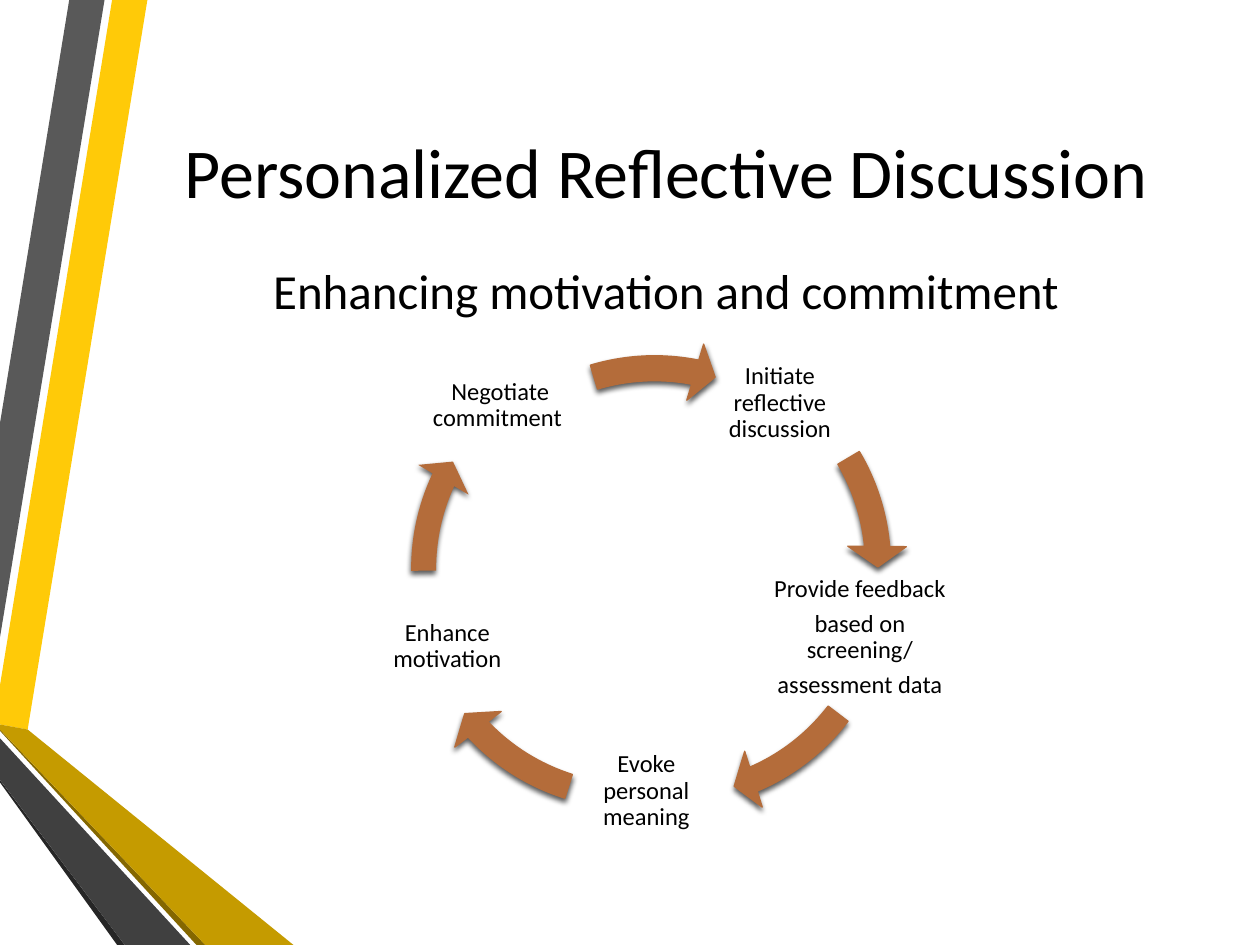
from dataclasses import dataclass
from lxml.etree import SubElement
from pptx import Presentation
from pptx.dml.color import RGBColor
from pptx.enum.shapes import MSO_SHAPE
from pptx.enum.text import MSO_ANCHOR, PP_ALIGN
from pptx.oxml.ns import qn
from pptx.util import Emu, Pt

EMU_PER_PX = 9144  # 100 px to the inch


@dataclass(frozen=True)
class Theme:
    font: str = "Calibri"
    text: str = "000000"
    arrow: str = "B46C3A"
    shadow: str = "000000"
    yellow: str = "FFCA08"
    gold: str = "C59B00"
    dark_gold: str = "846700"
    grey: str = "595959"
    dark_grey: str = "404040"
    charcoal: str = "262626"
    title_size: float = 40
    subtitle_size: float = 28
    label_size: float = 14


@dataclass(frozen=True)
class Ribbon:
    colour: str
    points: tuple[tuple[int, int], ...]


@dataclass(frozen=True)
class TextBlock:
    left: int
    top: int
    width: int
    height: int
    lines: tuple[str, ...]


@dataclass(frozen=True)
class CycleArrow:
    left: int
    top: int
    start: float  # degrees clockwise from three o'clock
    tip: float
    outlined: bool = True


THEME = Theme()
ARROW_BOX = 381

RIBBONS = (
    Ribbon(THEME.yellow, ((0, 544), (0, 575), (22, 579), (117, 0), (89, 0))),
    Ribbon(THEME.grey, ((83, 0), (55, 0), (0, 336), (0, 506))),
    Ribbon(THEME.charcoal, ((0, 619), (0, 621), (93, 750), (99, 750))),
    Ribbon(THEME.dark_gold, ((0, 579), (0, 580), (156, 750), (163, 750))),
    Ribbon(THEME.gold, ((0, 579), (163, 750), (233, 750), (22, 579), (0, 575))),
    Ribbon(THEME.dark_grey, ((0, 619), (99, 750), (151, 750), (0, 586))),
)

TITLE = TextBlock(107, 50, 843, 170, ("Personalized Reflective Discussion",))
SUBTITLE = TextBlock(107, 196, 843, 68, ("Enhancing motivation and commitment",))

STEPS = (
    TextBlock(339, 300, 116, 44, ("Negotiate commitment ",)),
    TextBlock(568, 269, 102, 102, ("Initiate reflective discussion",)),
    TextBlock(604, 455, 157, 102,
              ("Provide feedback", "based on screening/", "assessment data")),
    TextBlock(462, 577, 102, 102, ("Evoke personal meaning",)),
    TextBlock(304, 462, 102, 102, ("Enhance motivation",)),
)

ARROWS = (
    CycleArrow(329, 269, 253.29, 281.12),
    CycleArrow(311, 274, 107.47, 136.88),
    CycleArrow(313, 261, 179.49, 205.0, outlined=False),
    CycleArrow(342, 274, 37.53, 66.94),
    CycleArrow(339, 258, 329.41, 354.92),
)


def px(length: int) -> Emu:
    return Emu(length * EMU_PER_PX)


def rgb(colour: str) -> RGBColor:
    return RGBColor.from_string(colour)


def fill_shape(shape, colour: str) -> None:
    shape.shadow.inherit = False
    shape.fill.solid()
    shape.fill.fore_color.rgb = rgb(colour)
    shape.line.fill.background()


def add_ribbon(page, ribbon: Ribbon) -> None:
    first, *rest = ribbon.points
    builder = page.shapes.build_freeform(*first, scale=EMU_PER_PX)
    builder.add_line_segments(rest, close=True)
    fill_shape(builder.convert_to_shape(), ribbon.colour)


def add_text(page, block: TextBlock, size: float, space_after: float = 0,
             line_spacing: float = 1.0, inset: int | None = None) -> None:
    box = page.shapes.add_textbox(
        px(block.left), px(block.top), px(block.width), px(block.height))
    frame = box.text_frame
    frame.word_wrap = True
    frame.vertical_anchor = MSO_ANCHOR.MIDDLE
    if inset is not None:
        frame.margin_left = frame.margin_right = px(inset)
        frame.margin_top = frame.margin_bottom = px(inset)
    frame.text = "\n".join(block.lines)
    for para in frame.paragraphs:
        para.alignment = PP_ALIGN.CENTER
        para.line_spacing = line_spacing
        para.space_after = Pt(space_after)
        para.font.name = THEME.font
        para.font.size = Pt(size)
        para.font.color.rgb = rgb(THEME.text)


def add_drop_shadow(shape) -> None:
    effects = shape._element.spPr.find(qn("a:effectLst"))
    shadow = SubElement(effects, qn("a:outerShdw"), blurRad=str(Pt(3)),
                        dist=str(Pt(2)), dir="5400000", rotWithShape="0")
    colour = SubElement(shadow, qn("a:srgbClr"), val=THEME.shadow)
    SubElement(colour, qn("a:alpha"), val="64000")


def add_arrow(page, arrow: CycleArrow) -> None:
    shape = page.shapes.add_shape(
        MSO_SHAPE.CIRCULAR_ARROW, px(arrow.left), px(arrow.top),
        px(ARROW_BOX), px(ARROW_BOX))
    # Angles are stored in 60000ths of a degree, adjustments in 100000ths
    settings = (0.052, 5.59 * 0.6, arrow.tip * 0.6, arrow.start * 0.6, 0.061)
    for index, value in enumerate(settings):
        shape.adjustments[index] = value
    fill_shape(shape, THEME.arrow)
    if arrow.outlined:
        shape.line.color.rgb = rgb(THEME.arrow)
        shape.line.width = Pt(0.75)
    add_drop_shadow(shape)


def main() -> None:
    deck = Presentation()
    deck.slide_width, deck.slide_height = px(1000), px(750)
    page = deck.slides.add_slide(deck.slide_layouts[6])

    # Ribbons along the left edge
    for ribbon in RIBBONS:
        add_ribbon(page, ribbon)

    # Headings
    add_text(page, TITLE, THEME.title_size)
    add_text(page, SUBTITLE, THEME.subtitle_size, space_after=12)

    # Discussion cycle
    for step in STEPS:
        add_text(page, step, THEME.label_size, space_after=4.9,
                 line_spacing=0.9, inset=2)
    for arrow in ARROWS:
        add_arrow(page, arrow)

    deck.save("out.pptx")


if __name__ == "__main__":
    main()
